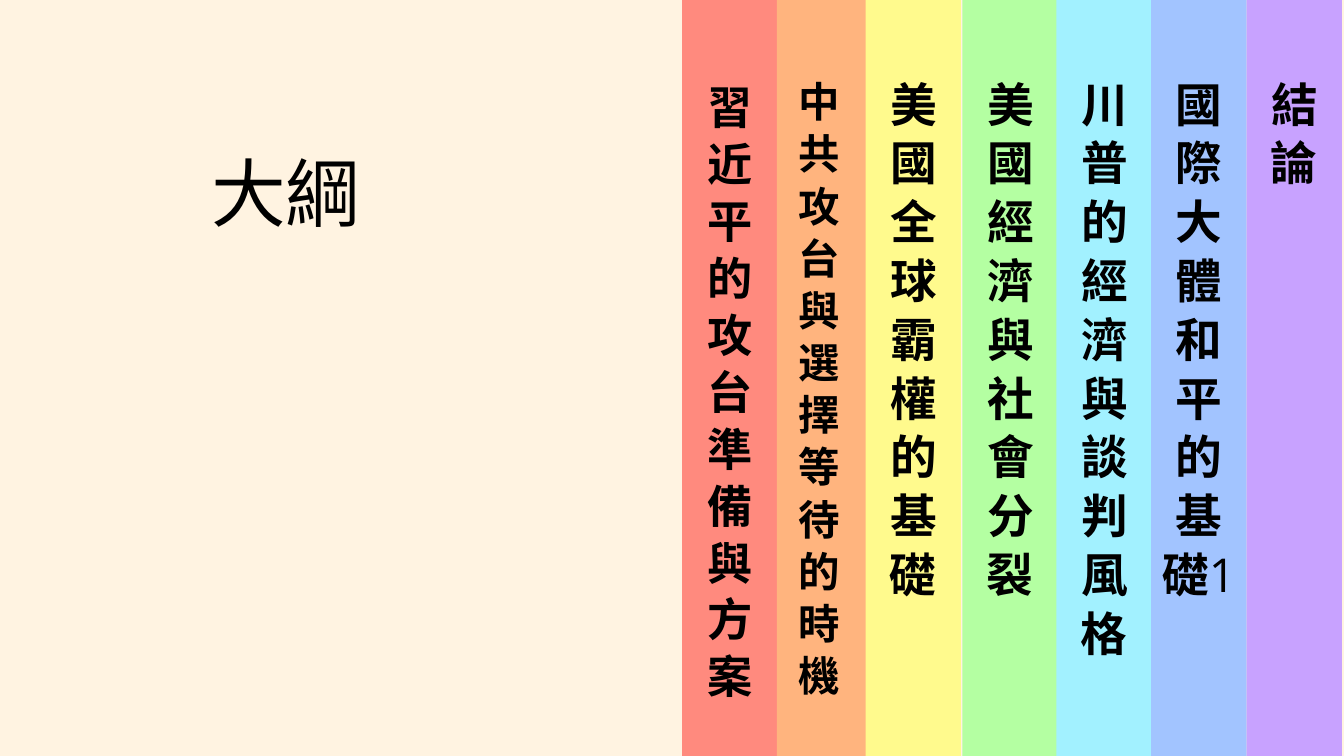
from collections import namedtuple

from lxml import etree
from pptx import Presentation
from pptx.dml.color import RGBColor
from pptx.enum.shapes import MSO_SHAPE
from pptx.enum.text import MSO_AUTO_SIZE, PP_ALIGN
from pptx.oxml.ns import qn
from pptx.util import Inches, Pt

RECTANGLE = MSO_SHAPE.RECTANGLE
CENTER = PP_ALIGN.CENTER
GROW = MSO_AUTO_SIZE.SHAPE_TO_FIT_TEXT

WIDTH, HEIGHT = 20, 11.25
STRIPE_WIDTH = 1.42
FONT = "Open Sans"

Style = namedtuple("Style", "size line_height bold spacing")
Topic = namedtuple("Topic", "left color center top width height style paragraphs")

TITLE = Style(80, 96, False, 0)
LARGE = Style(50, 63, True, -1)
MEDIUM = Style(48.4, 61, True, -1)
SMALL = Style(44.4, 55.9, True, -0.9)

TOPICS = [
    Topic(10.15, "FF8A7E", 0.71, 1.14, 0.66, 10.11, MEDIUM, list("習近平的攻台準備與方案")),
    Topic(11.56, "FFB47E", 0.63, 1.1, 1.12, 10, SMALL, ["中共攻台與選擇等待的時機"]),
    Topic(12.88, "FFFA8D", 0.71, 1.08, 1.12, 8.75, LARGE, ["美國全球霸權的基礎"]),
    Topic(14.32, "B4FFA2", 0.71, 1.08, 1.12, 8.75, LARGE, ["美國經濟與社會分裂"]),
    Topic(15.72, "A2F1FF", 0.71, 1.08, 1.12, 11.38, LARGE, ["川普的經濟與談判風格"]),
    Topic(17.13, "A2C4FF", 0.71, 1.08, 1.12, 9.62, LARGE, ["國際大體和平的基礎1"]),
    Topic(18.55, "C8A2FF", 0.71, 1.08, 1.12, 4.38, LARGE, ["結論"]),
]


def color(hex_string):
    """Turn a hex string into a colour."""
    return RGBColor.from_string(hex_string)


def add_run(paragraph, text, style, bold):
    """Add one run, with the same typeface for Latin and East Asian text."""
    run = paragraph.add_run()
    run.text = text
    run.font.size = Pt(style.size)
    run.font.bold = bold
    run.font.name = FONT
    run.font.color.rgb = color("000000")
    properties = run.font._element
    properties.set("spc", str(round(style.spacing * 100)))
    etree.SubElement(properties, qn("a:ea")).set("typeface", FONT)


def add_text(slide, left, top, width, height, paragraphs, style):
    """Add a centred text box without margins; digits stay regular."""
    box = slide.shapes.add_textbox(Inches(left), Inches(top), Inches(width), Inches(height))
    frame = box.text_frame
    frame.margin_left = frame.margin_right = frame.margin_top = frame.margin_bottom = 0
    frame.word_wrap = True
    frame.auto_size = GROW
    for index, text in enumerate(paragraphs):
        paragraph = frame.add_paragraph() if index else frame.paragraphs[0]
        paragraph.alignment = CENTER
        paragraph.line_spacing = Pt(style.line_height)
        words = text.rstrip("0123456789")
        add_run(paragraph, words, style, style.bold)
        if words != text:
            add_run(paragraph, text[len(words):], style, False)


def add_stripe(slide, left, fill):
    """Add one full-height colour stripe."""
    stripe = slide.shapes.add_shape(RECTANGLE, Inches(left), 0, Inches(STRIPE_WIDTH), Inches(HEIGHT))
    stripe.shadow.inherit = False
    stripe.fill.solid()
    stripe.fill.fore_color.rgb = color(fill)
    stripe.line.fill.background()


def add_topic(slide, topic):
    """Add a stripe with its topic running down it."""
    add_stripe(slide, topic.left, topic.color)
    text_left = topic.left + topic.center - topic.width / 2
    add_text(slide, text_left, topic.top, topic.width, topic.height, topic.paragraphs, topic.style)


def main():
    """Build the outline slide."""
    presentation = Presentation()
    presentation.slide_width = Inches(WIDTH)
    presentation.slide_height = Inches(HEIGHT)
    slide = presentation.slides.add_slide(presentation.slide_layouts[6])
    slide.background.fill.solid()
    slide.background.fill.fore_color.rgb = color("FFF3E1")
    add_text(slide, 1.15, 2.19, 6.21, 1.33, ["大綱"], TITLE)
    for topic in TOPICS:
        add_topic(slide, topic)
    presentation.save("out.pptx")


if __name__ == "__main__":
    main()
